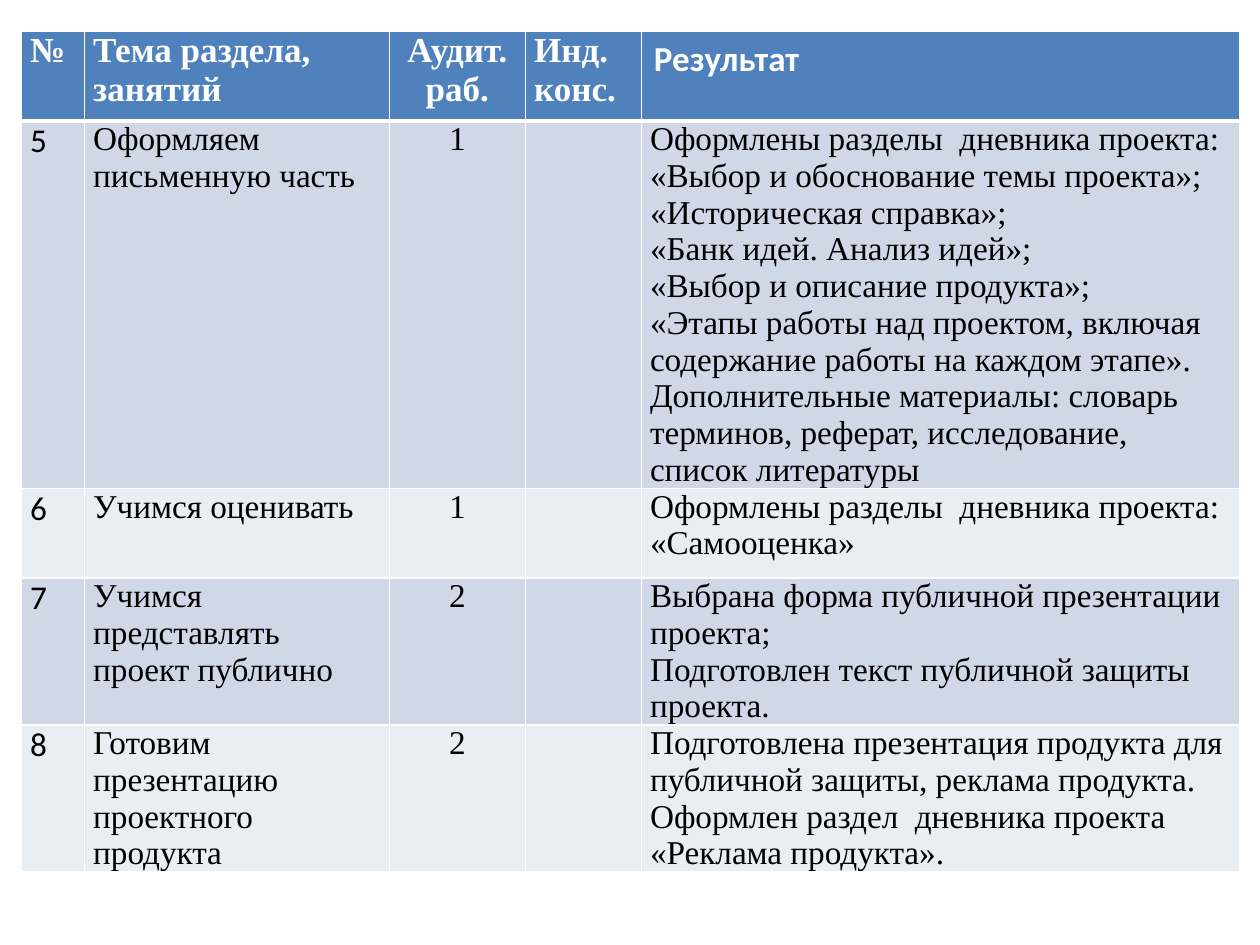
from dataclasses import dataclass

from lxml.etree import SubElement
from pptx import Presentation
from pptx.dml.color import RGBColor as RGB
from pptx.enum.text import PP_ALIGN as ALIGN
from pptx.oxml.ns import qn
from pptx.util import Inches, Pt


@dataclass(frozen=True)
class Theme:
    header: str = "4F81BD"
    bands: tuple = ("D0D8E8", "E9EDF4")
    light: str = "FFFFFF"
    dark: str = "000000"
    serif: str = "Times New Roman"
    sans: str = "Calibri"
    header_size: int = 20
    body_size: int = 19
    line: int = 1
    header_line: int = 3


THEME = Theme()
COLS = (0.5, 2.42, 1.08, 0.92, 4.75)
ROW_HEIGHT = 0.71
NUMBER, HOURS, RESULT = 0, 2, 4

HEADER = ("№", "Тема раздела, занятий", "Аудит.\nраб.", "Инд. конс.", "Результат")

# Number, topic, classroom hours, consultations, result paragraphs
LESSONS = (
    ("5", "Оформляем  письменную часть", "1", "", (
        "Оформлены разделы  дневника проекта:",
        "«Выбор и обоснование темы проекта»; «Историческая справка»;",
        "«Банк идей. Анализ идей»;",
        "«Выбор и описание продукта»;",
        "«Этапы работы над проектом, включая содержание работы на каждом этапе».",
        "Дополнительные материалы: словарь терминов, реферат, исследование, "
        "список литературы")),
    ("6", "Учимся оценивать", "1", "", (
        "Оформлены разделы  дневника проекта:",
        "«Самооценка»")),
    ("7", "Учимся представлять проект публично", "2", "", (
        "Выбрана форма публичной презентации проекта;",
        "Подготовлен текст публичной защиты проекта.")),
    ("8", "Готовим презентацию проектного продукта", "2", "", (
        "Подготовлена презентация продукта для публичной защиты, реклама продукта.",
        "Оформлен раздел  дневника проекта «Реклама продукта».")),
)


def set_format(target, values):
    for name, value in values.items():
        setattr(target, name, value)


def set_borders(cell, top, bottom):
    tc_pr = cell._tc.get_or_add_tcPr()
    widths = {"a:lnL": THEME.line, "a:lnR": THEME.line, "a:lnT": top, "a:lnB": bottom}
    for tag, width in widths.items():
        ln = SubElement(tc_pr, qn(tag), w=str(Pt(width)))
        fill = SubElement(ln, qn("a:solidFill"))
        SubElement(fill, qn("a:srgbClr"), val=THEME.light)


def set_fill(cell, color):
    cell.fill.solid()
    cell.fill.fore_color.rgb = RGB.from_string(color)


def set_insets(cell):
    set_format(cell, {"margin_left": Inches(0.07), "margin_right": Inches(0.07),
                      "margin_top": 0, "margin_bottom": 0})


def write_text(cell, content, font, color, paragraph):
    lines = (content,) if isinstance(content, str) else content
    tf = cell.text_frame
    for i, line in enumerate(lines):
        p = tf.add_paragraph() if i else tf.paragraphs[0]
        p.text = line
        set_format(p, paragraph)
        for r in p.runs:
            set_format(r.font, font)
            r.font.color.rgb = RGB.from_string(color)


def fill_header(table):
    for col, title in enumerate(HEADER):
        cell = table.cell(0, col)
        is_result = col == RESULT
        set_borders(cell, THEME.line, THEME.header_line)
        set_fill(cell, THEME.header)
        paragraph = {"alignment": ALIGN.CENTER if col == HOURS else ALIGN.LEFT}
        if not is_result:
            set_insets(cell)
            paragraph["space_before"] = Pt(14)
        font = {"name": THEME.sans if is_result else THEME.serif,
                "size": Pt(THEME.header_size), "bold": True}
        write_text(cell, title, font, THEME.light, paragraph)


def fill_lesson(table, row, lesson):
    for col, content in enumerate(lesson):
        cell = table.cell(row, col)
        set_borders(cell, THEME.header_line if row == 1 else THEME.line, THEME.line)
        set_fill(cell, THEME.bands[(row - 1) % 2])
        if not content:
            continue
        set_insets(cell)
        font = {"name": THEME.sans if col == NUMBER else THEME.serif,
                "size": Pt(THEME.body_size), "bold": False}
        align = ALIGN.CENTER if col == HOURS else ALIGN.LEFT
        write_text(cell, content, font, THEME.dark, {"alignment": align})


def add_plan_table(s):
    rows = len(LESSONS) + 1
    frame = s.shapes.add_table(rows, len(COLS), Inches(0.17), Inches(0.25),
                               Inches(sum(COLS)), Inches(ROW_HEIGHT * rows))
    table = frame.table
    for column, width in zip(table.columns, COLS):
        column.width = Inches(width)
    # Rows start at the minimum height and grow with their text
    for row in table.rows:
        row.height = Inches(ROW_HEIGHT)
    frame.height = Inches(7.11)
    fill_header(table)
    for row, lesson in enumerate(LESSONS, start=1):
        fill_lesson(table, row, lesson)


def main():
    prs = Presentation()
    prs.slide_width, prs.slide_height = Inches(10), Inches(7.5)
    # Blank layout: the slide has no title
    s = prs.slides.add_slide(prs.slide_layouts[6])
    add_plan_table(s)
    prs.save("out.pptx")


if __name__ == "__main__":
    main()
